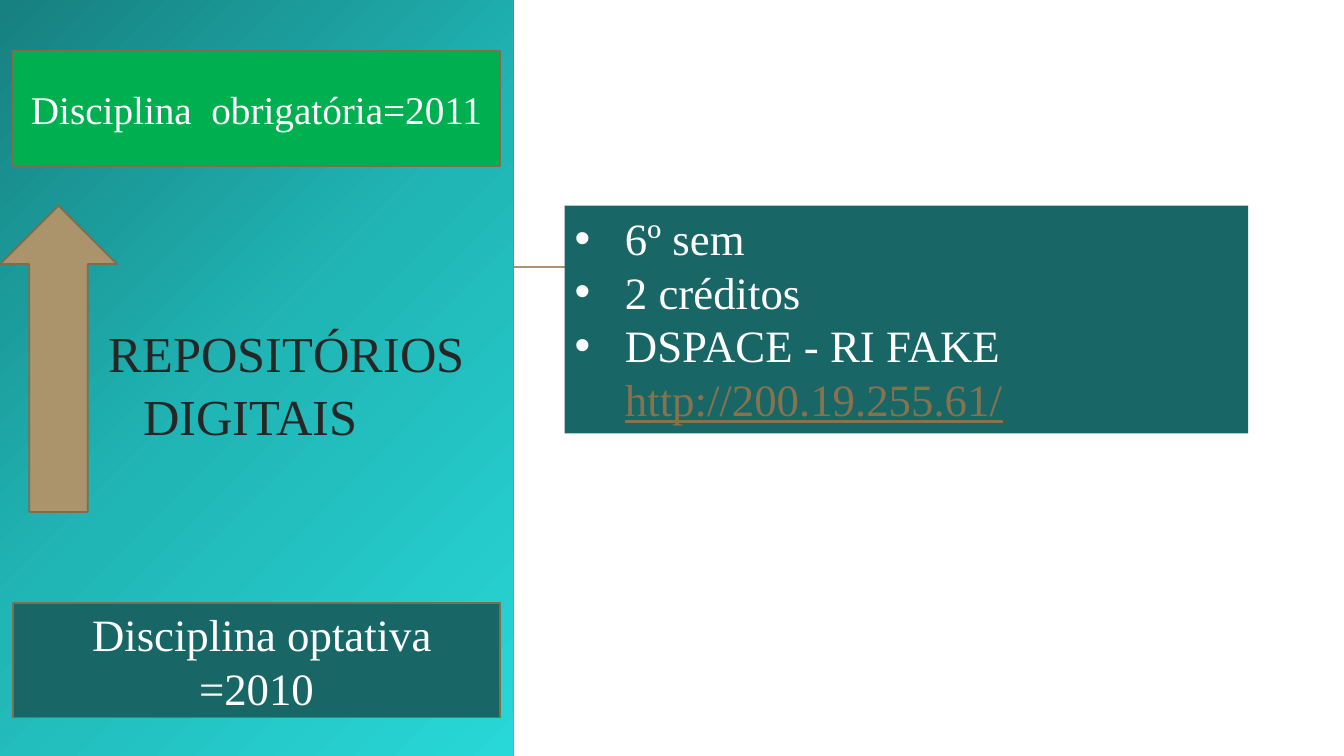
from copy import deepcopy
from pptx import Presentation
from pptx.dml.color import RGBColor
from pptx.enum.shapes import MSO_CONNECTOR, MSO_SHAPE
from pptx.enum.text import MSO_ANCHOR, MSO_AUTO_SIZE, PP_ALIGN
from pptx.oxml.ns import qn
from pptx.util import Inches, Pt
from lxml.etree import SubElement

FONT = "Times New Roman"
WHITE = RGBColor(0xFF, 0xFF, 0xFF)
INK = RGBColor(0x26, 0x26, 0x26)
TEAL = RGBColor(0x19, 0x66, 0x66)
GREEN = RGBColor(0x00, 0xB0, 0x50)
SAND = RGBColor(0xAB, 0x94, 0x6B)
BROWN = RGBColor(0x7F, 0x6D, 0x4F)
LINK = RGBColor(0x86, 0x72, 0x4D)
GRADIENT = [(0, RGBColor(0x17, 0x80, 0x80)),
            (0.5, RGBColor(0x21, 0xB6, 0xB6)),
            (1, RGBColor(0x28, 0xD7, 0xD7))]

# Content
TITLE = [("REPOSITÓRIOS", 36), (" ", 44), ("DIGITAIS ", 36)]
DETAILS = [
    [("6º sem", {})],
    [("2 créditos", {})],
    [("DSPACE - RI FAKE ", {}),
     ("http://200.19.255.61/", {"color": LINK, "underline": True})],
]
# text, size, fill, top, first-line indent
STAGES = [("Disciplina  obrigatória=2011", 28, GREEN, 0.51, 0),
          ("Disciplina optativa =2010", 32, TEAL, 5.98, 0.11)]

# Layout in inches
WIDTH, HEIGHT = 13.33, 7.5
PANEL_W = 5.09
MARGIN = 0.13
ROW_TOP = 2.04
STAGE_W, STAGE_H = PANEL_W - 2 * MARGIN, 1.14

prs = Presentation()
prs.slide_width, prs.slide_height = Inches(WIDTH), Inches(HEIGHT)
s = prs.slides.add_slide(prs.slide_layouts[5])


def add_run(p, text, size=32, color=WHITE, underline=None):
    r = p.add_run()
    r.text = text
    r.font.name, r.font.size = FONT, Pt(size)
    r.font.color.rgb = color
    r.font.underline = underline


def set_indent(p, left, first):
    pPr = p._p.get_or_add_pPr()
    pPr.set("marL", str(Inches(left)))
    pPr.set("indent", str(Inches(first)))
    return pPr


def add_block(kind, x, y, w, h, fill, line=None):
    sp = s.shapes.add_shape(kind, Inches(x), Inches(y), Inches(w), Inches(h))
    sp.shadow.inherit = False
    sp.fill.solid()
    sp.fill.fore_color.rgb = fill
    if line is None:
        sp.line.fill.background()
    else:
        sp.line.color.rgb = line
        sp.line.width = Pt(1.25)
    return sp


# Title panel with its three-stop gradient
title = s.shapes.title
title.left = title.top = 0
title.width, title.height = Inches(PANEL_W), Inches(HEIGHT)
title.fill.gradient()
title.fill.gradient_angle = 315
stops = title.element.find(".//" + qn("a:gsLst"))
stops.insert(1, deepcopy(stops[0]))
for stop, (position, color) in zip(title.fill.gradient_stops, GRADIENT):
    stop.position = position
    stop.color.rgb = color
tf = title.text_frame
tf.word_wrap = True
tf.auto_size = MSO_AUTO_SIZE.NONE
tf.vertical_anchor = MSO_ANCHOR.MIDDLE
p = tf.paragraphs[0]
p.alignment = PP_ALIGN.CENTER
set_indent(p, 0, 0.6)
for text, size in TITLE:
    add_run(p, text, size, INK)

# Rule that runs behind the panel and the details box
rule = s.shapes.add_connector(MSO_CONNECTOR.STRAIGHT, Inches(1.53), Inches(2.65),
                              Inches(11.81), Inches(2.65))
rule.line.color.rgb = SAND
rule.line.width = Pt(1.25)
SubElement(rule.element.spPr, qn("a:effectLst"))
title.element.addprevious(rule.element)

# Details box
details = add_block(MSO_SHAPE.RECTANGLE, 5.6, ROW_TOP, 6.78, 2.26, TEAL)
tf = details.text_frame
tf.word_wrap = True
tf.vertical_anchor = MSO_ANCHOR.TOP
for i, runs in enumerate(DETAILS):
    p = tf.add_paragraph() if i else tf.paragraphs[0]
    p.alignment = PP_ALIGN.LEFT
    pPr = set_indent(p, 0.5, -0.5)
    SubElement(pPr, qn("a:buFont")).set("typeface", "Arial")
    SubElement(pPr, qn("a:buChar")).set("char", "•")
    for text, style in runs:
        add_run(p, text, **style)

# Arrow from the optional stage up to the compulsory one
add_block(MSO_SHAPE.UP_ARROW, 0, ROW_TOP, 1.16, 3.04, SAND, BROWN)

# Stage boxes
for text, size, fill, top, first in STAGES:
    stage = add_block(MSO_SHAPE.RECTANGLE, MARGIN, top, STAGE_W, STAGE_H, fill, BROWN)
    tf = stage.text_frame
    tf.word_wrap = True
    tf.vertical_anchor = MSO_ANCHOR.MIDDLE
    p = tf.paragraphs[0]
    p.alignment = PP_ALIGN.CENTER
    set_indent(p, 0, first)
    add_run(p, text, size)

prs.save("out.pptx")
